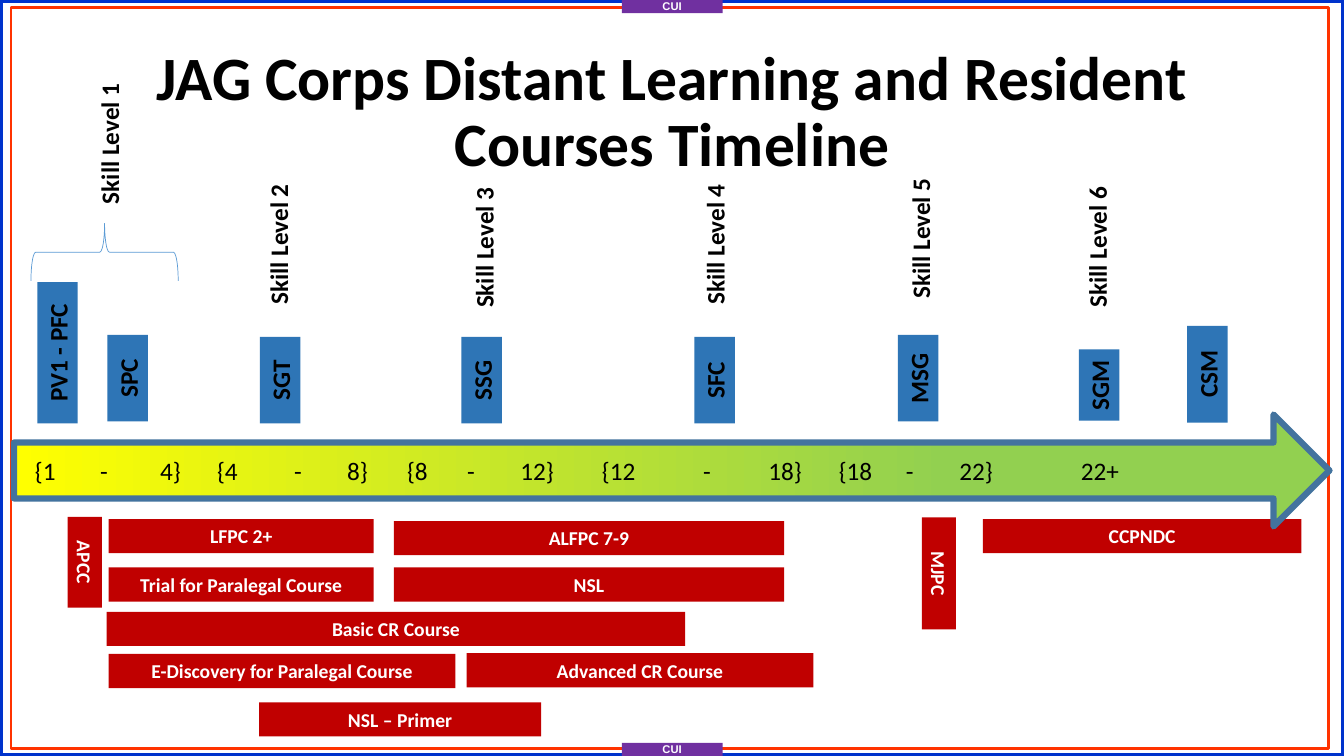
from lxml import etree
from pptx import Presentation
from pptx.dml.color import RGBColor
from pptx.enum import shapes, text
from pptx.oxml import ns
from pptx.util import Cm, Pt

WIDE, HIGH = 33.87, 19.05
KIND = shapes.MSO_SHAPE
COLORS = {
    "blue": "0033CC", "orange": "FF3300", "purple": "7030A0",
    "red": "C00000", "rank": "2E75B6", "brace": "5B9BD5",
    "edge": "43739E", "yellow": "FFFF00", "green": "92D050",
    "black": "000000", "white": "FFFFFF",
}
BARS = [
    ("APCC", 0.99, 13.74, 2.29, 90),
    ("ALFPC 7-9", 9.93, 13.13, 9.83, 0),
    ("LFPC 2+", 2.74, 13.08, 6.68, 0),
    ("CCPNDC", 24.77, 13.08, 8.03, 0),
    ("MJPC", 22.25, 14.02, 2.82, 90),
    ("NSL – Primer", 6.53, 17.7, 7.11, 0),
    ("Basic CR Course", 2.69, 15.42, 14.58, 0),
    ("Advanced CR Course", 11.76, 16.46, 8.74, 0),
    ("Trial for Paralegal Course", 2.74, 14.3, 6.68, 0),
    ("E-Discovery for Paralegal Course", 2.74, 16.48, 8.74, 0),
    ("NSL", 9.93, 14.3, 9.83, 0),
]
RANKS = [
    ("CSM", 29.21, 8.92, 2.44), ("SFC", 16.92, 9.07, 2.18),
    ("SGT", 5.97, 9.07, 2.18), ("SGM", 26.8, 9.19, 1.8),
    ("MSG", 22.05, 9.02, 2.18), ("SSG", 11.05, 9.07, 2.18),
    ("SPC", 2.13, 9.02, 2.18), ("PV1 - PFC", -0.33, 8.38, 3.56),
]
SKILLS = [
    (0.97, 3.1, 3.56), (5.23, 5.64, 3.56), (10.41, 5.72, 3.56),
    (16.23, 5.64, 3.56), (21.41, 5.49, 3.56), (25.65, 5.49, 3.99),
]
SPANS = [
    ("{1", "4}", 0.88, 2.62, 4.56), ("{4", "8}", 5.47, 7.51, 9.27),
    ("{8", "12}", 10.26, 11.87, 13.96),
    ("{12", "18}", 15.17, 17.82, 20.21),
    ("{18", "22}", 21.14, 22.93, 25.02),
]


def color(name):
    return RGBColor.from_string(COLORS[name])


def place(area):
    return [Cm(side) for side in area]


def add_form(slide, kind, area, fill=None, line=None, width=1, turn=0):
    form = slide.shapes.add_shape(kind, *place(area))
    form.shadow.inherit = False
    form.rotation = turn
    if fill:
        form.fill.solid()
        form.fill.fore_color.rgb = color(fill)
    else:
        form.fill.background()
    if line:
        form.line.color.rgb = color(line)
        form.line.width = Pt(width)
    else:
        form.line.fill.background()
    return form


def write(form, words, size, ink="black", bold=True, font="Calibri",
          align=text.PP_ALIGN.CENTER):
    frame = form.text_frame
    frame.word_wrap = True
    frame.text = words
    para = frame.paragraphs[0]
    para.alignment = align
    for run in para.runs:
        run.font.name = font
        run.font.size = Pt(size)
        run.font.bold = bold
        run.font.color.rgb = color(ink)
    return para


def add_text(slide, area, words, size, turn=0, **style):
    box = slide.shapes.add_textbox(*place(area))
    box.rotation = turn
    return box, write(box, words, size, **style)


def add_mark(slide, top):
    mark = add_form(slide, KIND.RECTANGLE, (15.67, top, 2.54, 0.33), "purple")
    write(mark, "CUI", 8, "white", font="Arial")
    frame = mark.text_frame
    frame.margin_left = frame.margin_right = 0
    frame.margin_top = frame.margin_bottom = 0
    frame.word_wrap = False


def add_span(slide, first, last, start, dash, end):
    area = (start - 0.25, 11.35, end - start + 0.6, 1.02)
    para = add_text(slide, area, f"{first}\t-\t{last}", 18, bold=False,
                    align=text.PP_ALIGN.LEFT)[1]
    tabs = etree.SubElement(para._p.get_or_add_pPr(), ns.qn("a:tabLst"))
    for spot, align in ((dash, "ctr"), (end, "r")):
        etree.SubElement(tabs, ns.qn("a:tab"),
                         pos=str(Cm(spot - start)), algn=align)


def add_arrow(slide):
    arrow = add_form(slide, KIND.DOWN_ARROW, (15.52, -4.72, 2.82, 33.15),
                     line="edge", width=4.5, turn=270)
    arrow.fill.gradient()
    arrow.fill.gradient_angle = 270
    stops = arrow.fill.gradient_stops
    for stop, spot, name in zip(stops, (0, 0.71), ("yellow", "green")):
        stop.position = spot
        stop.color.rgb = color(name)


def main():
    deck = Presentation()
    deck.slide_width, deck.slide_height = Cm(WIDE), Cm(HIGH)
    slide = deck.slides.add_slide(deck.slide_layouts[6])

    add_form(slide, KIND.RECTANGLE, (0, 0, WIDE, HIGH), None, "blue", 3.75)
    add_form(slide, KIND.RECTANGLE, (0.28, 0.18, 33.2, 18.69),
             None, "orange", 2)
    for top in (0, HIGH - 0.33):
        add_mark(slide, top)

    title, para = add_text(
        slide, (2.34, 1.02, 29.21, 3.68),
        "JAG Corps Distant Learning and Resident Courses Timeline", 44)
    title.text_frame.vertical_anchor = text.MSO_ANCHOR.MIDDLE
    para.line_spacing = 0.9

    for name, left, top, width, turn in BARS:
        bar = add_form(slide, KIND.RECTANGLE, (left, top, width, 0.86),
                       "red", turn=turn)
        write(bar, name, 14, "white")
    for name, left, top, width in RANKS:
        rank = add_form(slide, KIND.RECTANGLE, (left, top, width, 1.02),
                        "rank", turn=270)
        write(rank, name, 18)
    for level, (left, top, width) in enumerate(SKILLS, 1):
        add_text(slide, (left, top, width, 1.02), f"Skill Level {level}", 18,
                 270, align=text.PP_ALIGN.LEFT)

    add_form(slide, KIND.LEFT_BRACE, (1.91, 4.5, 1.45, 3.71),
             line="brace", width=0.5, turn=90)
    add_arrow(slide)
    for span in SPANS:
        add_span(slide, *span)
    add_text(slide, (25.56, 11.35, 4.32, 1.02), "22+", 18, bold=False)
    deck.save("out.pptx")


if __name__ == "__main__":
    main()
